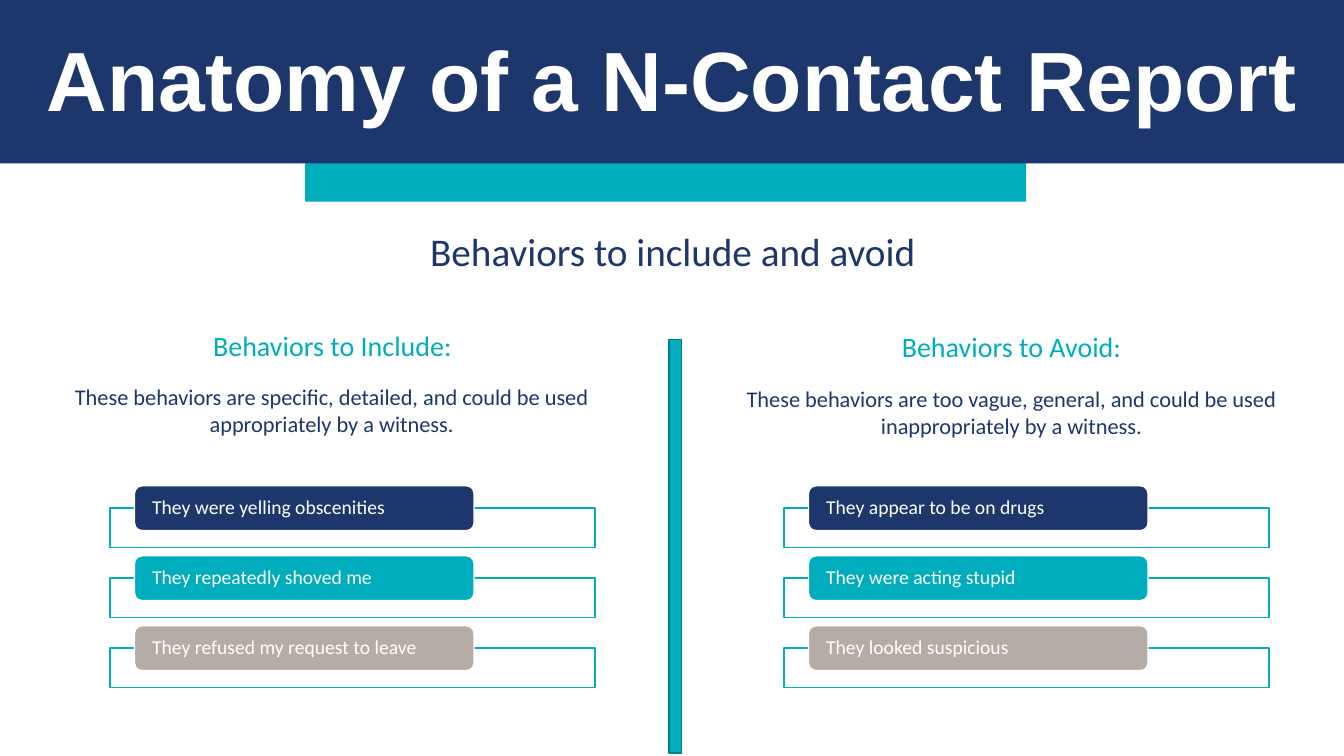
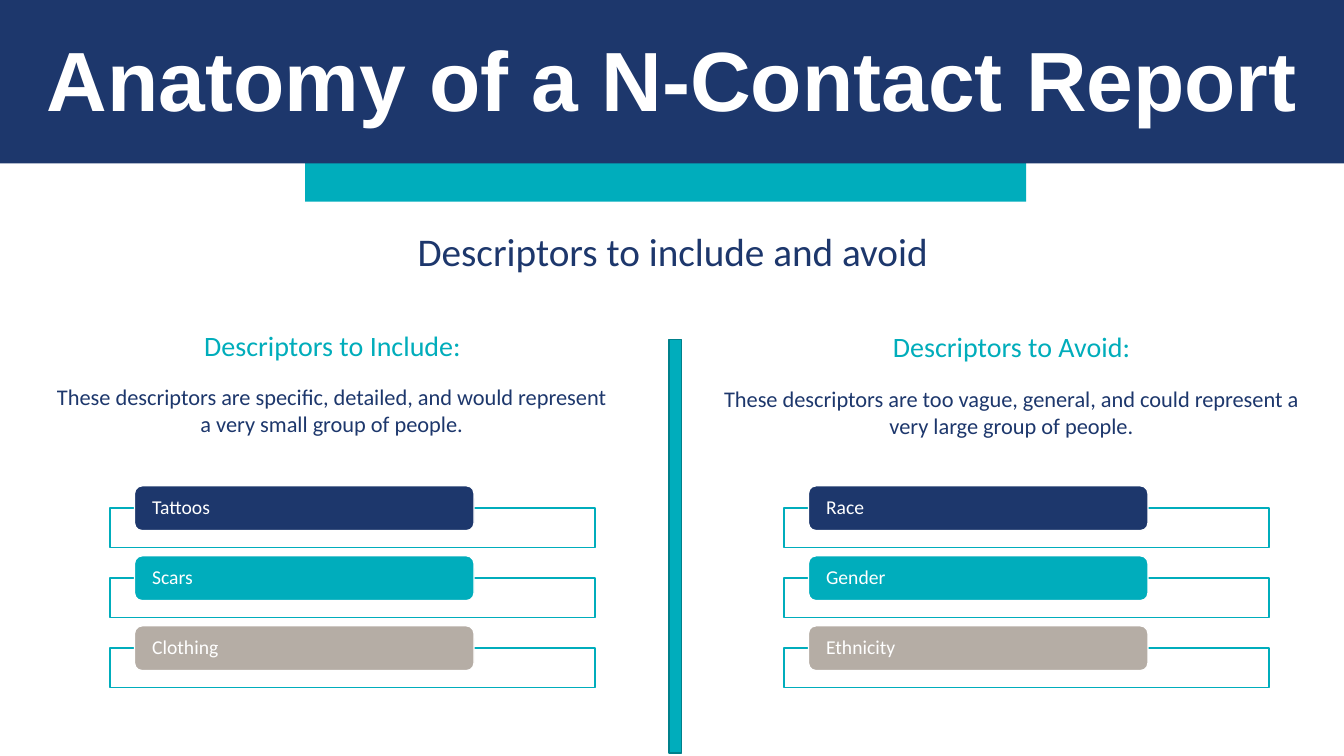
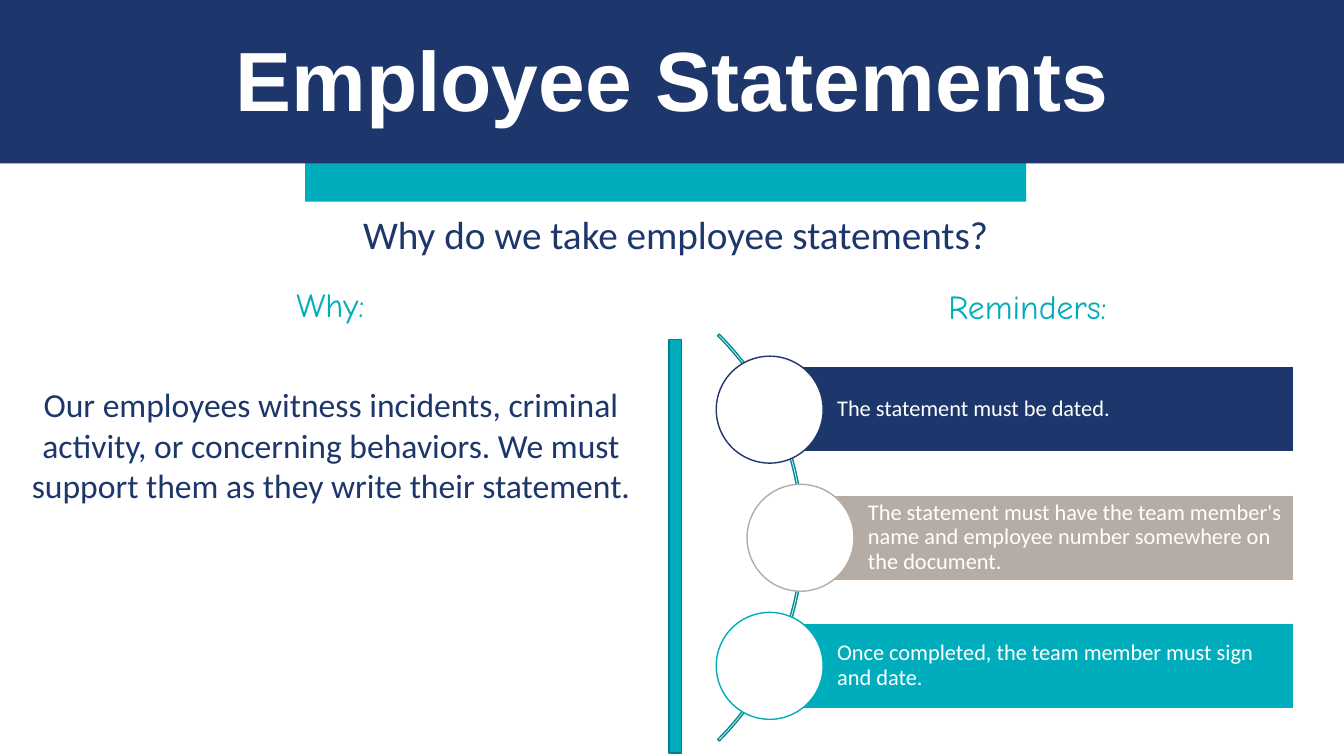
from pptx import Presentation
from pptx.dml.color import RGBColor
from pptx.enum.shapes import MSO_SHAPE
from pptx.enum.text import MSO_ANCHOR, MSO_AUTO_SIZE, PP_ALIGN
from pptx.util import Pt

RECT, ROUND = MSO_SHAPE.RECTANGLE, MSO_SHAPE.ROUNDED_RECTANGLE
OVAL, ARC = MSO_SHAPE.OVAL, MSO_SHAPE.BLOCK_ARC
TOP, MIDDLE = MSO_ANCHOR.TOP, MSO_ANCHOR.MIDDLE
LEFT, CENTER = PP_ALIGN.LEFT, PP_ALIGN.CENTER
FIXED = MSO_AUTO_SIZE.NONE

COLORS = {
    "navy": "1D376C",
    "teal": "00ADBC",
    "taupe": "B5ADA5",
    "white": "FFFFFF",
    "head": "00ADBB",
    "edge": "00808B",
    "arc": "008B97",
}


def color(name):
    return RGBColor.from_string(COLORS[name])


class Deck:
    def __init__(self):
        self.prs = Presentation()
        self.prs.slide_width, self.prs.slide_height = Pt(960), Pt(540)
        self.slide = None

    def start(self, title):
        """Add a slide with its bands, title and middle divider."""
        self.slide = self.prs.slides.add_slide(self.prs.slide_layouts[5])
        self.shape(RECT, 218, 99.5, 515, 44.5, "teal")
        self.shape(RECT, -9, 0, 974, 116.8, "navy")
        head = self.slide.shapes.title
        head.left, head.top, head.width, head.height = Pt(0), Pt(23), Pt(960), Pt(74)
        head.element.getparent().append(head.element)  # in front of the bands
        self.text(head, title, 60, "white", CENTER, "Arial")
        para = head.text_frame.paragraphs[0]
        para.font.bold = True
        para.line_spacing = Pt(65)
        self.shape(RECT, 478, 242.6, 9, 295.4, "teal", "edge")

    def shape(self, kind, x, y, w, h, fill=None, line=None):
        item = self.slide.shapes.add_shape(kind, Pt(x), Pt(y), Pt(w), Pt(h))
        item.shadow.inherit = False
        if fill:
            item.fill.solid()
            item.fill.fore_color.rgb = color(fill)
        else:
            item.fill.background()
        if line:
            item.line.color.rgb = color(line)
            item.line.width = Pt(1)
        else:
            item.line.fill.background()
        return item

    def text(self, item, words, size, tint, align=LEFT, font="Calibri",
             anchor=TOP, insets=(7.2, 3.6, 7.2, 3.6)):
        frame = item.text_frame
        frame.text = words
        frame.word_wrap = True
        frame.auto_size = FIXED
        frame.vertical_anchor = anchor
        (frame.margin_left, frame.margin_top,
         frame.margin_right, frame.margin_bottom) = map(Pt, insets)
        para = frame.paragraphs[0]
        para.alignment = align
        para.font.name, para.font.size = font, Pt(size)
        para.font.color.rgb = color(tint)

    def label(self, x, y, w, h, words, size, tint="navy", font="Calibri"):
        box = self.slide.shapes.add_textbox(Pt(x), Pt(y), Pt(w), Pt(h))
        self.text(box, words, size, tint, CENTER, font)

    def bar(self, item, words, size, insets):
        self.text(item, words, size, "white", anchor=MIDDLE, insets=insets)
        item.text_frame.paragraphs[0].line_spacing = 0.9

    def tabs(self, x, items):
        """Stack outlined boxes, each with a coloured tab on its top edge."""
        for i, (words, fill) in enumerate(zip(items, ("navy", "teal", "taupe"))):
            y = 363 + 50 * i
            self.shape(RECT, x, y, 346.5, 28, "white", "teal")
            tab = self.shape(ROUND, x + 17.5, y - 16, 242.5, 32, fill, "white")
            self.bar(tab, words, 14, (11, 0, 11, 0))

    def compare(self, topic, include, avoid):
        """Build a slide of two columns; each is a blurb and its items."""
        self.start("Anatomy of a N-Contact Report")
        self.label(173, 159, 615, 41, f"{topic} to include and avoid", 28)
        self.label(44, 231, 387, 32, f"{topic} to Include:", 20, "head")
        self.label(529, 232, 387, 32, f"{topic} to Avoid:", 20, "head")
        self.label(507, 271.5, 431, 46, avoid[0], 16)
        self.tabs(560, avoid[1])
        self.tabs(78.6, include[1])
        self.label(32, 270, 410, 46, include[0], 16)

    def arc(self, rows):
        """Place bars with circles along a thin curve."""
        curve = self.shape(ARC, 163, 178.5, 411, 411, None, "arc")
        for i, value in enumerate((189, 27, 0.004)):
            curve.adjustments[i] = value
        for i, (x, fill, words) in enumerate(rows):
            y = 262 + 91.5 * i
            row = self.shape(RECT, x, y, 924 - x, 61, fill, "white")
            self.bar(row, words, 16, (48, 3, 3, 3))
            self.shape(OVAL, x - 38.4, y - 7.6, 76.4, 76.4, "white", fill)


def main():
    deck = Deck()
    deck.compare(
        "Behaviors",
        ("These behaviors are specific, detailed, and could be used "
         "appropriately by a witness.",
         ("They were yelling obscenities", "They repeatedly shoved me",
          "They refused my request to leave")),
        ("These behaviors are too vague, general, and could be used "
         "inappropriately by a witness.",
         ("They appear to be on drugs", "They were acting stupid",
          "They looked suspicious")))
    deck.compare(
        "Descriptors",
        ("These descriptors are specific, detailed, and would represent "
         "a very small group of people.",
         ("Tattoos", "Scars", "Clothing")),
        ("These descriptors are too vague, general, and could represent "
         "a very large group of people.",
         ("Race", "Gender", "Ethnicity")))

    deck.start("Employee Statements")
    deck.label(175, 147, 615, 41, "Why do we take employee statements?", 28)
    deck.label(12, 271, 449, 94,
               "Our employees witness incidents, criminal activity, or concerning "
               "behaviors. We must support them as they write their statement.", 24)
    deck.label(115, 199.5, 242, 36, "Why:", 24, "head", "Comic Neue")
    deck.label(613, 201, 242, 36, "Reminders:", 24, "head", "Comic Neue")
    deck.arc((
        (550, "navy", "The statement must be dated."),
        (572, "taupe", "The statement must have the team member's name and "
                       "employee number somewhere on the document."),
        (550, "teal", "Once completed, the team member must sign and date."),
    ))
    deck.prs.save("out.pptx")


if __name__ == "__main__":
    main()
